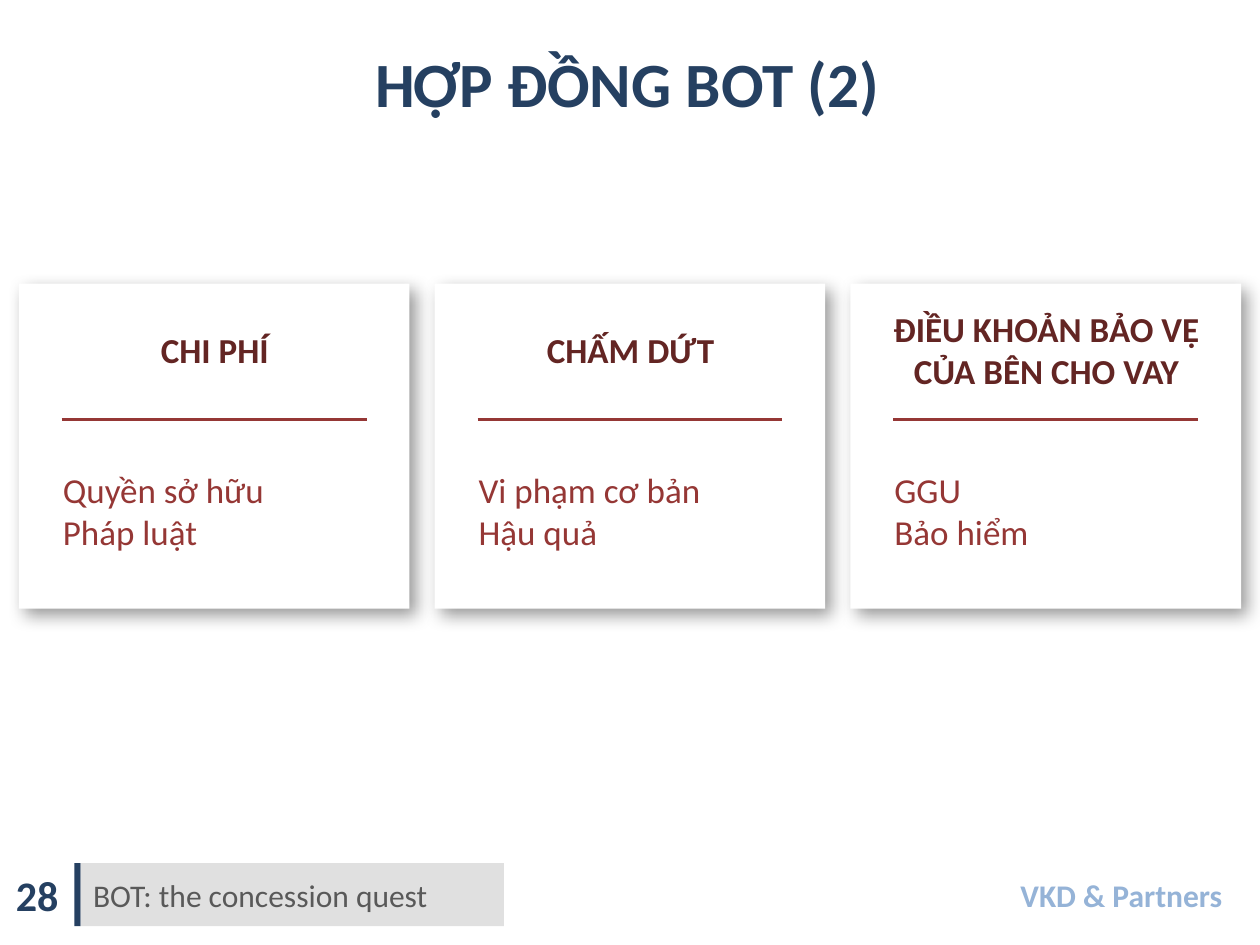
from dataclasses import dataclass

import pptx
import pptx.dml.color
import pptx.enum.shapes
import pptx.enum.text
import pptx.oxml
import pptx.oxml.ns
import pptx.util
from lxml import etree

Inches, Pt = pptx.util.Inches, pptx.util.Pt
ALIGN = pptx.enum.text.PP_ALIGN
ANCHOR = pptx.enum.text.MSO_ANCHOR
FIT = pptx.enum.text.MSO_AUTO_SIZE
qn = pptx.oxml.ns.qn

COLORS = {
    "navy": "254061", "sky": "95B3D7", "grey": "D9D9D9", "text": "595959",
    "white": "FFFFFF", "red": "953735", "maroon": "632523", "black": "000000",
}
FONT = "Calibri"

# Card grid, in inches
CARD_LEFT, CARD_TOP, CARD_W, CARD_H = 0.15, 2.25, 3.1, 2.58
GAP = 0.2
HEADING_MID = 2.78
ROW_HEIGHTS = {1: 0.44, 2: 0.77}
FOOTER_TOP, FOOTER_H = 6.85, 0.5


@dataclass
class Card:
    heading: str
    heading_rows: int
    items: list[str]


@dataclass
class Style:
    size: int
    color: str
    bold: bool = False
    align: ALIGN = ALIGN.LEFT


CARDS = [
    Card("CHI PHÍ", 1, ["Quyền sở hữu", "Pháp luật"]),
    Card("CHẤM DỨT", 1, ["Vi phạm cơ bản", "Hậu quả"]),
    Card("ĐIỀU KHOẢN BẢO VỆ CỦA BÊN CHO VAY", 2, ["GGU", "Bảo hiểm"]),
]
TITLE = Style(36, "navy", True, ALIGN.CENTER)
HEADING = Style(20, "maroon", True, ALIGN.CENTER)
ITEM = Style(20, "red", align=ALIGN.JUSTIFY)
NUMBER = Style(24, "navy", True, ALIGN.CENTER)
FOOTER = Style(18, "text")
FIRM = Style(18, "sky", True)


def rgb(name: str) -> pptx.dml.color.RGBColor:
    return pptx.dml.color.RGBColor.from_string(COLORS[name])


def write(tf, lines: list[str], style: Style) -> None:
    for i, line in enumerate(lines):
        p = tf.add_paragraph() if i else tf.paragraphs[0]
        p.text = line
        p.alignment = style.align
        p.font.name, p.font.size, p.font.bold = FONT, Pt(style.size), style.bold
        p.font.color.rgb = rgb(style.color)


def add_text(slide, box: tuple, lines: list[str], style: Style,
             wrap: bool = True, middle: bool = False) -> None:
    tf = slide.shapes.add_textbox(*map(Inches, box)).text_frame
    tf.word_wrap = wrap
    if middle:
        tf.vertical_anchor = ANCHOR.MIDDLE
    else:
        tf.auto_size = FIT.SHAPE_TO_FIT_TEXT
    write(tf, lines, style)


def add_rect(slide, box: tuple, color: str):
    sp = slide.shapes.add_shape(pptx.enum.shapes.MSO_SHAPE.RECTANGLE, *map(Inches, box))
    sp.fill.solid()
    sp.fill.fore_color.rgb = rgb(color)
    sp.line.fill.background()
    sp.shadow.inherit = False
    return sp


def add_shadow(sp) -> None:
    effects = sp._element.spPr.find(qn("a:effectLst"))
    shadow = etree.SubElement(
        effects, qn("a:outerShdw"), blurRad=str(Pt(10)), dist=str(Pt(5)),
        dir=str(45 * 60000), algn="tl", rotWithShape="0")
    color = etree.SubElement(shadow, qn("a:srgbClr"), val=COLORS["black"])
    etree.SubElement(color, qn("a:alpha"), val="40000")


def add_rule(slide, left: float, right: float, y: float) -> None:
    line = slide.shapes.add_connector(
        pptx.enum.shapes.MSO_CONNECTOR.STRAIGHT, *map(Inches, (left, y, right, y)))
    line.line.color.rgb = rgb("red")
    line.line.width = Pt(1.5)
    etree.SubElement(line._element.spPr, qn("a:effectLst"))


def add_card(slide, column: int, card: Card) -> None:
    x = CARD_LEFT + column * (CARD_W + GAP)
    add_shadow(add_rect(slide, (x, CARD_TOP, CARD_W, CARD_H), "white"))
    add_rule(slide, x + 0.34, x + CARD_W - 0.34, 3.33)
    add_text(slide, (x + 0.25, 3.67, 2.61, ROW_HEIGHTS[2]), card.items, ITEM)
    h = ROW_HEIGHTS[card.heading_rows]
    add_text(slide, (x + 0.08, HEADING_MID - h / 2, 2.95, h), [card.heading], HEADING)


def add_footer(slide) -> None:
    add_rect(slide, (0.59, FOOTER_TOP, 0.05, FOOTER_H), "navy")
    band = add_rect(slide, (0.64, FOOTER_TOP, 3.36, FOOTER_H), "grey")
    fill = band._element.spPr.find(qn("a:solidFill"))
    etree.SubElement(fill[0], qn("a:alpha"), val="80000")
    band.text_frame.vertical_anchor = ANCHOR.MIDDLE
    write(band.text_frame, ["BOT: the concession quest"], FOOTER)
    add_text(slide, (0, FOOTER_TOP, 0.59, FOOTER_H), ["28"], NUMBER, middle=True)
    add_text(slide, (8, FOOTER_TOP, 1.95, FOOTER_H), ["VKD & Partners"], FIRM, middle=True)


def main() -> None:
    prs = pptx.Presentation()
    prs.slide_width, prs.slide_height = Inches(10), Inches(7.5)
    slide = prs.slides.add_slide(prs.slide_layouts[6])
    # Footer and title
    add_footer(slide)
    add_text(slide, (2.86, 0.3, 4.24, 0.71), ["HỢP ĐỒNG BOT (2)"], TITLE, wrap=False)
    # Three cards
    for column, card in enumerate(CARDS):
        add_card(slide, column, card)
    prs.save("out.pptx")


if __name__ == "__main__":
    main()
